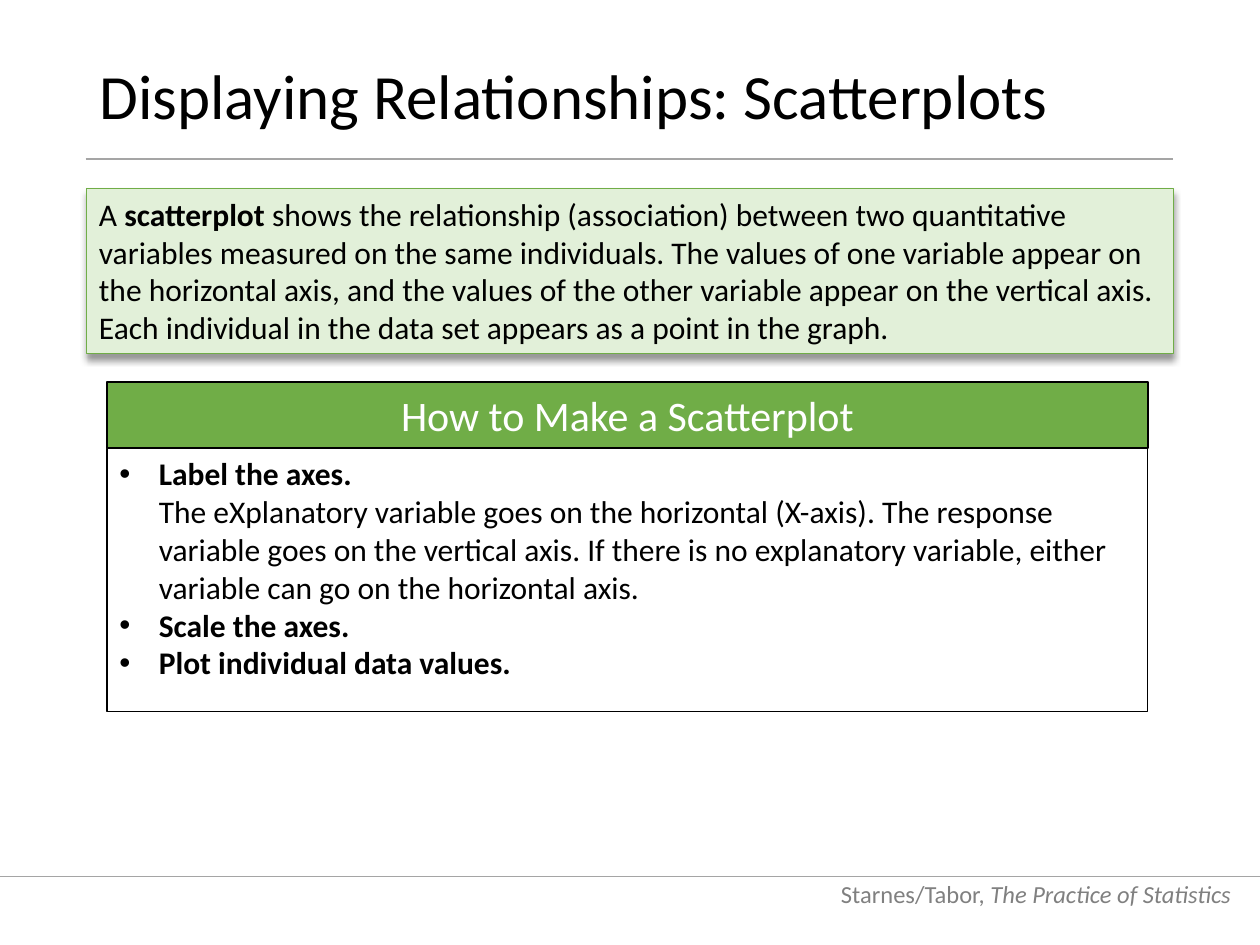
from lxml import etree
from pptx import Presentation
from pptx.dml.color import RGBColor
from pptx.enum import shapes, text
from pptx.oxml import ns
from pptx.util import Pt

COLORS = {
    "black": "000000", "white": "FFFFFF", "gray": "808080",
    "rule": "A5A5A5", "green": "70AD47", "pale": "E2F0D9",
}
ALIGN = text.PP_ALIGN
ANCHOR = text.MSO_ANCHOR

prs = Presentation()
prs.slide_width, prs.slide_height = Pt(720), Pt(540)
slide = prs.slides.add_slide(prs.slide_layouts[6])


def add_box(left, top, width, height, anchor, fill=None, line=None, weight=0.5):
    box = slide.shapes.add_shape(shapes.MSO_SHAPE.RECTANGLE,
                                 Pt(left), Pt(top), Pt(width), Pt(height))
    box.shadow.inherit = False
    for paint, color in ((box.fill, fill), (box.line.fill, line)):
        if color:
            paint.solid()
            paint.fore_color.rgb = RGBColor.from_string(COLORS[color])
        else:
            paint.background()
    if line:
        box.line.width = Pt(weight)
    box.text_frame.word_wrap = True
    box.text_frame.vertical_anchor = anchor
    return box


def write(paragraph, runs, size, color="black", align=ALIGN.LEFT):
    paragraph.alignment = align
    for words, style in runs:
        run = paragraph.add_run()
        run.text = words
        run.font.name = "Calibri"
        run.font.size = Pt(size)
        run.font.bold = style == "bold"
        run.font.italic = style == "italic"
        run.font.color.rgb = RGBColor.from_string(COLORS[color])


# Footer
footer = add_box(465.84, 493.92, 244.8, 28.8, ANCHOR.BOTTOM)
write(footer.text_frame.paragraphs[0],
      [("Starnes/Tabor,", None), (" The Practice of Statistics", "italic")],
      14, "gray", ALIGN.RIGHT)

# Rules above the footer and below the title
for start, end, y, weight in ((0, 720, 501.12, 0.5), (49, 670.3, 90.9, 1.5)):
    rule = slide.shapes.add_connector(shapes.MSO_CONNECTOR.STRAIGHT,
                                      Pt(start), Pt(y), Pt(end), Pt(y))
    rule.line.color.rgb = RGBColor.from_string(COLORS["rule"])
    rule.line.width = Pt(weight)
    etree.SubElement(rule._element.spPr, ns.qn("a:effectLst"))

# Title
title = add_box(49.68, 28.8, 620.64, 56.16, ANCHOR.MIDDLE)
title_line = title.text_frame.paragraphs[0]
title_line.line_spacing = 0.9
write(title_line, [("Displaying Relationships: Scatterplots", None)], 36)

# Definition with a soft shadow
definition = add_box(49.5, 107.8, 621, 94.2, ANCHOR.TOP, "pale", "green")
write(definition.text_frame.paragraphs[0], [
    ("A ", None),
    ("scatterplot", "bold"),
    (" shows the relationship (association) between two quantitative variables "
     "measured on the same individuals. The values of one variable appear on the "
     "horizontal axis, and the values of the other variable appear on the vertical "
     "axis. Each individual in the data set appears as a point in the graph.", None),
], 18)
effects = definition._element.spPr.find(ns.qn("a:effectLst"))
shadow = etree.SubElement(effects, ns.qn("a:outerShdw"), blurRad=str(Pt(4)),
                          dist=str(Pt(3)), dir="5400000", rotWithShape="0")
shade = etree.SubElement(shadow, ns.qn("a:srgbClr"), val=COLORS["black"])
etree.SubElement(shade, ns.qn("a:alpha"), val="40000")

# How-to heading and steps
heading = add_box(61.2, 218.16, 594.72, 37.8, ANCHOR.MIDDLE, "green", "black", 1)
write(heading.text_frame.paragraphs[0], [("How to Make a Scatterplot", None)],
      24, "white", ALIGN.CENTER)

steps = add_box(61.2, 256.1, 594.72, 150.5, ANCHOR.TOP, None, "black", 0.75)
step_texts = [
    ("Label the axes.",
     "The eXplanatory variable goes on the horizontal (X-axis). The response "
     "variable goes on the vertical axis. If there is no explanatory variable, "
     "either variable can go on the horizontal axis."),
    ("Scale the axes.", None),
    ("Plot individual data values.", None),
]
for number, (step, detail) in enumerate(step_texts):
    frame = steps.text_frame
    paragraph = frame.paragraphs[0] if number == 0 else frame.add_paragraph()
    props = paragraph._p.get_or_add_pPr()
    props.set("marL", str(Pt(22.5)))
    props.set("indent", str(Pt(-22.5)))
    etree.SubElement(props, ns.qn("a:buFont"), typeface="Arial")
    etree.SubElement(props, ns.qn("a:buChar"), char="•")
    write(paragraph, [(step, "bold")], 18)
    if detail:
        paragraph.add_line_break()
        write(paragraph, [(detail, None)], 18)

prs.save("out.pptx")
